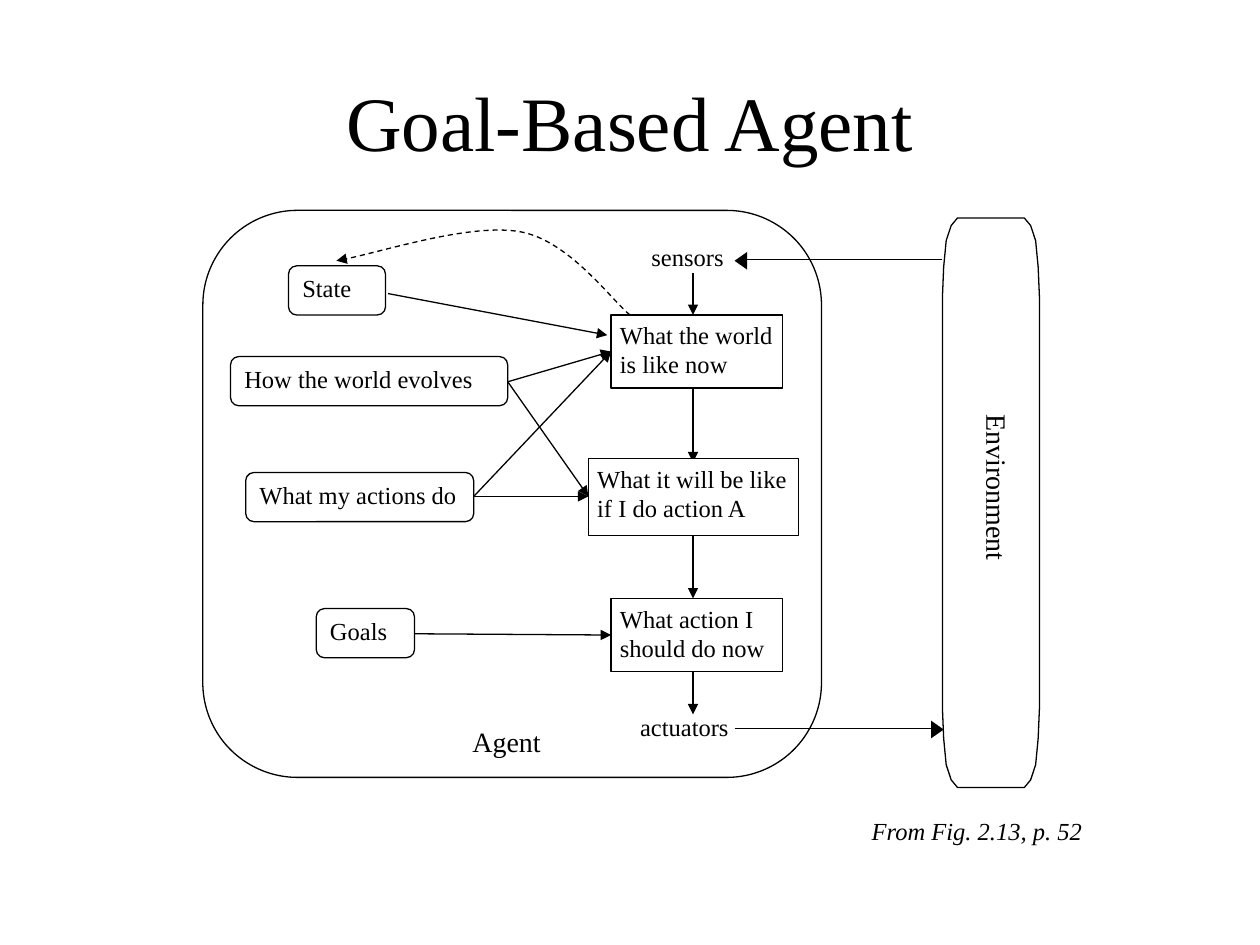
from lxml import etree
from pptx import Presentation
from pptx import util as u
from pptx.dml.color import RGBColor
from pptx.enum import dml, shapes, text
from pptx.oxml.ns import qn

COLORS = {"ink": "000000", "paper": "FFFFFF"}
FONT = "Times New Roman"
LINE_WIDTH = 0.75
RECT = shapes.MSO_SHAPE.RECTANGLE
ROUNDED = shapes.MSO_SHAPE.ROUNDED_RECTANGLE


def color(name):
    return RGBColor.from_string(COLORS[name])


def inches(*lengths):
    return [u.Inches(length) for length in lengths]


def shift(points, left, top):
    return [(left + x, top + y) for x, y in points]


def paint(shape, fill="paper", outline=True):
    shape.shadow.inherit = False
    if fill:
        shape.fill.solid()
        shape.fill.fore_color.rgb = color(fill)
    else:
        shape.fill.background()
    if outline:
        shape.line.color.rgb = color("ink")
        shape.line.width = u.Pt(LINE_WIDTH)
    else:
        shape.line.fill.background()


def write(shape, words, size=14, italic=False, insets=(0, 0), wrap=True,
          align=text.PP_ALIGN.LEFT, anchor=text.MSO_ANCHOR.TOP):
    frame = shape.text_frame
    frame.word_wrap = wrap
    frame.vertical_anchor = anchor
    frame.margin_left = frame.margin_right = u.Inches(insets[0])
    frame.margin_top = frame.margin_bottom = u.Inches(insets[1])
    paragraph = frame.paragraphs[0]
    paragraph.alignment = align
    run = paragraph.add_run()
    run.text = words
    run.font.name = FONT
    run.font.size = u.Pt(size)
    run.font.italic = italic
    run.font.color.rgb = color("ink")


def label(slide, box, words, **style):
    write(slide.shapes.add_textbox(*inches(*box)), words, **style)


def block(slide, kind, box, words=None, fill="paper", outline=True, **style):
    shape = slide.shapes.add_shape(kind, *inches(*box))
    paint(shape, fill, outline)
    if words:
        write(shape, words, **style)
    return shape


def add_arrowhead(shape):
    etree.SubElement(shape.line._get_or_add_ln(), qn("a:tailEnd"), type="triangle")


def line(slide, start, end, arrow=True):
    connector = slide.shapes.add_connector(
        shapes.MSO_CONNECTOR.STRAIGHT, *inches(*start, *end))
    connector.line.color.rgb = color("ink")
    connector.line.width = u.Pt(LINE_WIDTH)
    if arrow:
        add_arrowhead(connector)
    etree.SubElement(connector._element.spPr, qn("a:effectLst"))


def outline_shape(slide, points, close=True, **look):
    start, *corners = [inches(*point) for point in points]
    builder = slide.shapes.build_freeform(*start)
    builder.add_line_segments(corners, close=close)
    shape = builder.convert_to_shape()
    paint(shape, **look)
    return shape


def curve(slide, points):
    """Dashed arrow through cubic segments: a start, then three points for each."""
    shape = outline_shape(slide, points, close=False, fill=None)
    route = shape._element.spPr.find(".//" + qn("a:path"))
    corners = route.findall(qn("a:lnTo"))
    for first in range(0, len(corners), 3):
        segment = etree.SubElement(route, qn("a:cubicBezTo"))
        for corner in corners[first:first + 3]:
            segment.append(corner[0])
            route.remove(corner)
    shape.line.dash_style = dml.MSO_LINE.DASH
    add_arrowhead(shape)


def agent(slide, left, top, width, height):
    def at(x, y):
        return left + x, top + y

    frame = block(slide, ROUNDED, (left, top, width, height), fill=None)
    frame.adjustments[0] = 0.167

    for x, y, w, h, words, size in [(3.56, 0.25, 0.61, 0.28, "sensors", 14),
                                    (3.47, 3.98, 0.72, 0.26, "actuators", 14),
                                    (2.14, 4.08, 0.56, 0.26, "Agent", 16)]:
        label(slide, (*at(x, y), w, h), words, size=size, wrap=False)

    spine = 3.89
    for start, end in [(0.5, 0.83), (1.41, 2), (2.58, 3.08), (3.66, 4)]:
        line(slide, at(spine, start), at(spine, end))

    for x, y, w, h, words in [
            (3.24, 0.83, 1.36, 0.58, "What the world is like now"),
            (3.06, 1.97, 1.67, 0.61, "What it will be like if I do action A"),
            (3.24, 3.08, 1.36, 0.58, "What action I should do now")]:
        block(slide, RECT, (*at(x, y), w, h), words, insets=(0.07, 0.04))

    for x, y, w, words in [(0.68, 0.44, 0.77, "State"),
                           (0.22, 1.16, 2.2, "How the world evolves"),
                           (0.34, 2.08, 1.81, "What my actions do"),
                           (0.9, 3.16, 0.78, "Goals")]:
        block(slide, ROUNDED, (*at(x, y), w, 0.39), words, insets=(0.09, 0.04))

    state, evolves, actions, goals = (1.47, 0.66), (2.42, 1.36), (2.15, 2.27), (1.68, 3.36)
    world, prediction = (3.24, 1.12), (3.06, 2.27)
    for start, end in [(state, (3.21, 0.99)), (evolves, world), (actions, world),
                       (evolves, prediction), (actions, prediction),
                       (goals, (3.24, 3.37))]:
        line(slide, at(*start), at(*end))

    feedback = [(3.39, 0.83), (3.25, 0.72), (2.91, 0.24), (2.52, 0.17),
                (2.13, 0.1), (1.36, 0.35), (1.06, 0.4)]
    curve(slide, shift(feedback, left, top))


def environment(slide, left, top, width, height):
    corner = [(0.12, 0), (0.07, 0.06), (0.03, 0.18), (0.01, 0.39), (0, 0.63)]
    left_side = corner + [(x, height - y) for x, y in reversed(corner)]
    right_side = [(width - x, y) for x, y in reversed(left_side)]
    outline_shape(slide, shift(left_side + right_side, left, top))
    caption = block(slide, RECT, (left + 0.14, top + 1.52, 0.52, 1.42),
                    "Environment", outline=False, size=16, insets=(0.09, 0.04))
    caption.text_frame._txBody.bodyPr.set("vert", "eaVert")


def channel(slide, start, end, y):
    """Line between agent and environment with a large solid head at its end."""
    toward = 1 if end > start else -1
    line(slide, (start, y), (end - 0.08 * toward, y), arrow=False)
    head = [(-0.1 * toward, -0.07), (0, 0), (-0.1 * toward, 0.07)]
    outline_shape(slide, shift(head, end, y + 0.01), fill="ink", outline=False)


def main():
    deck = Presentation()
    deck.slide_width, deck.slide_height = inches(10, 7.5)
    slide = deck.slides.add_slide(deck.slide_layouts[6])

    label(slide, (0.75, 0.33, 8.5, 1.25), "Goal-Based Agent", size=44,
          insets=(0.1, 0.05), align=text.PP_ALIGN.CENTER,
          anchor=text.MSO_ANCHOR.MIDDLE)
    agent(slide, 1.61, 1.67, 4.91, 4.5)
    environment(slide, 7.48, 1.73, 0.77, 4.52)
    channel(slide, 7.48, 5.83, 2.06)
    channel(slide, 5.83, 7.49, 5.78)
    label(slide, (6.82, 6.43, 1.89, 0.34), "From Fig. 2.13, p. 52",
          italic=True, insets=(0.1, 0.05), wrap=False)
    deck.save("out.pptx")


if __name__ == "__main__":
    main()
